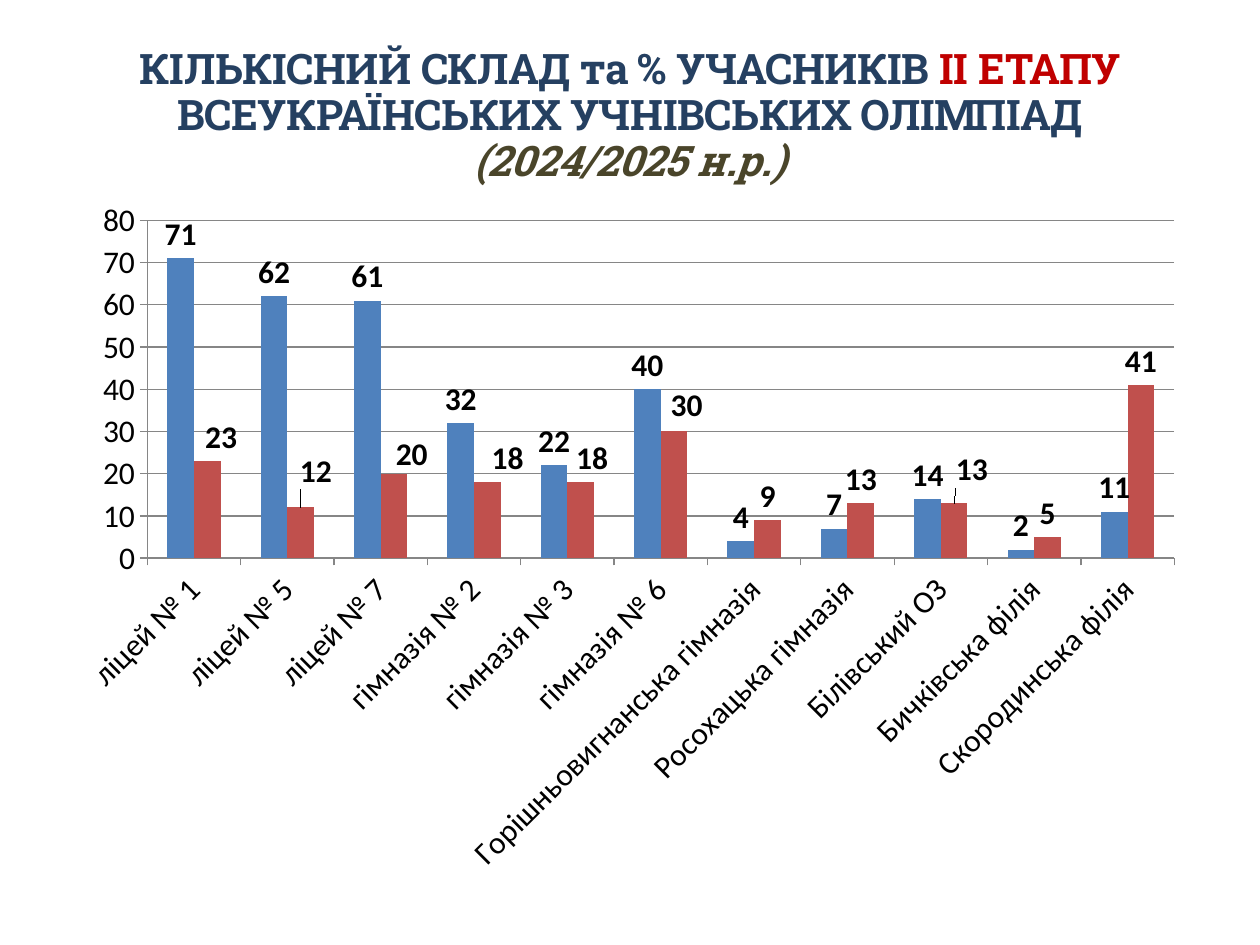
import pptx
import pptx.chart.data
import pptx.dml.color
import pptx.enum.chart
import pptx.enum.text
import pptx.oxml
import pptx.oxml.ns
import pptx.util
from pptx.util import Inches, Pt

THEME = {
    "title_font": "Roboto Slab", "title_size": 24, "title_line_spacing": 0.91,
    "chart_font": "Calibri", "chart_size": 18,
    "navy": "254061", "red": "C00000", "olive": "4A452A",
    "text": "000000", "axis": "868686", "count": "4F81BD", "percent": "C0504D",
}

# text, colour, italic, letter spacing in points
TITLE_RUNS = [
    ("КІЛЬКІСНИЙ СКЛАД ", "navy", False, -0.2),
    ("та % ", "navy", False, -0.3),
    ("УЧАСНИКІВ ", "navy", False, -0.2),
    ("ІІ ", "red", False, -0.1),
    ("ЕТАПУ ", "red", False, -0.2),
    ("ВСЕУКРАЇНСЬКИХ УЧНІВСЬКИХ ОЛІМПІАД", "navy", False, -0.2),
    (" (2024/2025 н.р.)", "olive", True, -0.2),
]

# school, number of participants, percentage
SCHOOLS = [
    ("ліцей № 1", 71, 23),
    ("ліцей № 5", 62, 12),
    ("ліцей № 7", 61, 20),
    ("гімназія № 2", 32, 18),
    ("гімназія № 3", 22, 18),
    ("гімназія № 6", 40, 30),
    ("Горішньовигнанська гімназія", 4, 9),
    ("Росохацька гімназія", 7, 13),
    ("Білівський ОЗ", 14, 13),
    ("Бичківська філія", 2, 5),
    ("Скородинська філія", 11, 41),
]

# percentage labels moved aside: school index -> shift in inches
LABEL_SHIFTS = {
    0: (0.11, 0), 1: (0.12, -0.1), 2: (0.14, 0.04), 3: (0.16, 0),
    4: (0.09, 0), 5: (0.1, -0.02), 8: (0.14, -0.08),
}

TITLE_BOX = (0.5, 0.3, 9, 1.25)
CHART_BOX = (0.5, 1.48, 9, 5.55)
PLOT_BOX = (1.17, 1.75, 8.15, 2.68)


def color(name):
    return pptx.dml.color.RGBColor.from_string(THEME[name])


def apply_format(target, values):
    for name, value in values.items():
        setattr(target, name, value)


def manual_layout(values, target=""):
    """Return a c:layout element with positions as fractions of the chart."""
    modes = "".join(f'<c:{axis}Mode val="edge"/>' for axis in "xy") if target else ""
    places = "".join(f'<c:{name} val="{value:.4f}"/>' for name, value in values.items())
    return pptx.oxml.parse_xml(
        f'<c:layout {pptx.oxml.ns.nsdecls("c")}><c:manualLayout>'
        f'{target}{modes}{places}</c:manualLayout></c:layout>')


def add_title(slide):
    frame = slide.shapes.add_textbox(*map(Inches, TITLE_BOX)).text_frame
    apply_format(frame, {"word_wrap": True,
                         "vertical_anchor": pptx.enum.text.MSO_ANCHOR.MIDDLE})
    paragraph = frame.paragraphs[0]
    apply_format(paragraph, {"alignment": pptx.enum.text.PP_ALIGN.CENTER,
                             "line_spacing": THEME["title_line_spacing"]})
    for text, color_name, italic, spacing in TITLE_RUNS:
        run = paragraph.add_run()
        run.text = text
        apply_format(run.font, {"name": THEME["title_font"], "size": Pt(THEME["title_size"]),
                                "bold": True, "italic": italic})
        run.font.color.rgb = color(color_name)
        run._r.get_or_add_rPr().set("spc", str(round(spacing * 100)))


def format_axes(chart):
    for axis in (chart.category_axis, chart.value_axis):
        axis.major_tick_mark = pptx.enum.chart.XL_TICK_MARK.OUTSIDE
        axis.format.line.color.rgb = color("axis")
        axis.format.line.width = Pt(0.75)
    chart.category_axis.has_major_gridlines = False
    label_body = chart.category_axis.tick_labels.font._element.getparent().getparent().getparent()
    label_body.find(pptx.oxml.ns.qn("a:bodyPr")).set("rot", "-2700000")
    apply_format(chart.value_axis, {"minimum_scale": 0, "maximum_scale": 80,
                                    "major_unit": 10, "has_major_gridlines": True})
    gridline = chart.value_axis.major_gridlines.format.line
    gridline.color.rgb = color("axis")
    gridline.width = Pt(0.75)


def format_label(labels):
    labels.position = pptx.enum.chart.XL_LABEL_POSITION.OUTSIDE_END
    apply_format(labels.font, {"name": THEME["chart_font"], "bold": True,
                               "size": Pt(THEME["chart_size"])})
    labels.font.color.rgb = color("text")


def add_chart(slide):
    names, counts, percents = zip(*SCHOOLS)
    data = pptx.chart.data.CategoryChartData()
    data.categories = names
    data.add_series("Series 1", counts)
    data.add_series("Series 2", percents)
    chart = slide.shapes.add_chart(
        pptx.enum.chart.XL_CHART_TYPE.COLUMN_CLUSTERED, *map(Inches, CHART_BOX), data).chart
    apply_format(chart, {"has_legend": False, "has_title": False})
    apply_format(chart.font, {"name": THEME["chart_font"], "size": Pt(THEME["chart_size"])})
    chart.font.color.rgb = color("text")
    format_axes(chart)

    plot = chart.plots[0]
    apply_format(plot, {"gap_width": 150, "overlap": 0, "vary_by_categories": False})
    for series, color_name in zip(plot.series, ("count", "percent")):
        series.format.fill.solid()
        series.format.fill.fore_color.rgb = color(color_name)
        series.data_labels.show_value = True
        format_label(series.data_labels)

    left, top, width, height = CHART_BOX
    percent_series = plot.series[1]
    for index, (shift_x, shift_y) in LABEL_SHIFTS.items():
        format_label(percent_series.points[index].data_label)
        label = percent_series._element.xpath(f'c:dLbls/c:dLbl[c:idx/@val="{index}"]')[0]
        label.insert(1, manual_layout({"x": shift_x / width, "y": shift_y / height}))

    plot_left, plot_top, plot_width, plot_height = PLOT_BOX
    plot_area = chart._chartSpace.chart.plotArea
    for layout in plot_area.findall(pptx.oxml.ns.qn("c:layout")):
        plot_area.remove(layout)
    plot_area.insert(0, manual_layout(
        {"x": (plot_left - left) / width, "y": (plot_top - top) / height,
         "w": plot_width / width, "h": plot_height / height},
        '<c:layoutTarget val="inner"/>'))


def main():
    presentation = pptx.Presentation()
    apply_format(presentation, {"slide_width": Inches(10), "slide_height": Inches(7.5)})
    slide = presentation.slides.add_slide(presentation.slide_layouts[6])
    add_title(slide)
    add_chart(slide)
    presentation.save("out.pptx")


if __name__ == "__main__":
    main()
